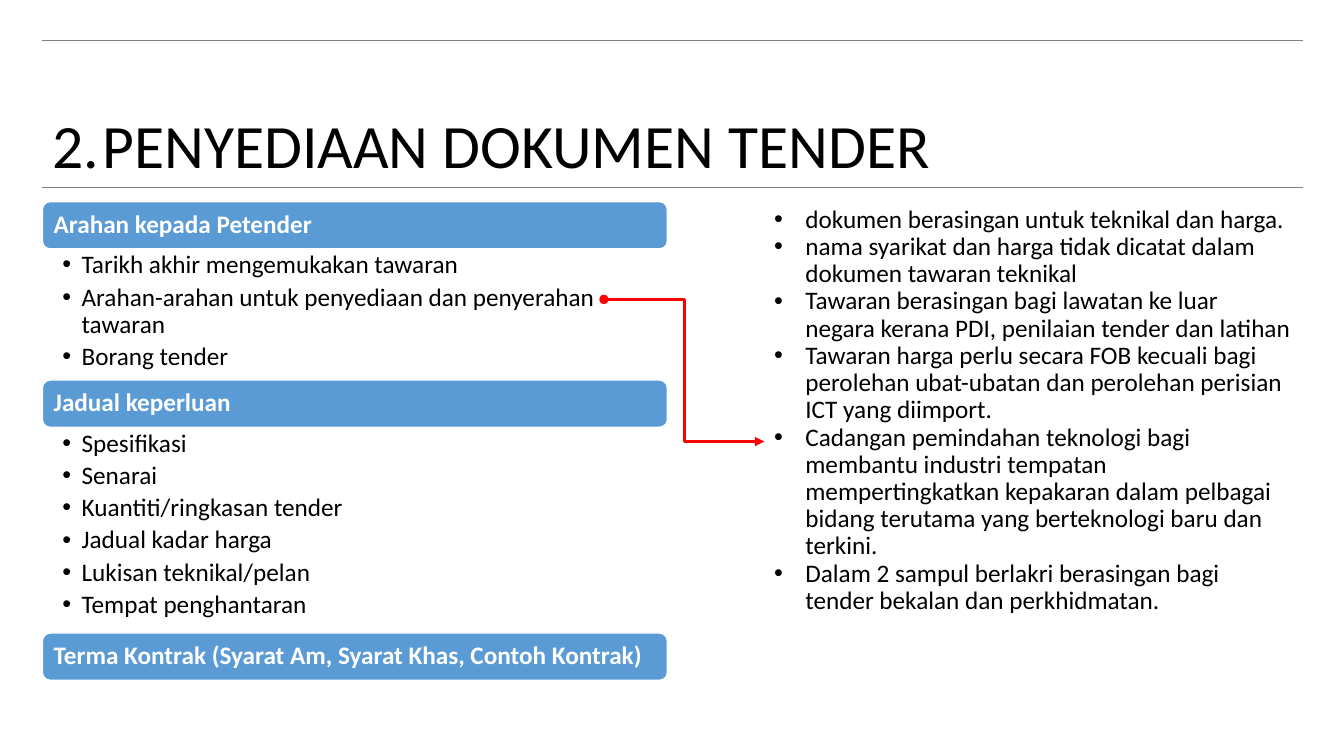
"""Build the tender document preparation slide."""
from lxml import etree
from pptx import Presentation, util as u
from pptx.dml.color import RGBColor
from pptx.enum import shapes, text
from pptx.oxml import ns

TITLE = "2.\tPENYEDIAAN DOKUMEN TENDER"
SECTIONS = [
    ("Arahan kepada Petender", 1.3, [
        "Tarikh akhir mengemukakan tawaran",
        "Arahan-arahan untuk penyediaan dan penyerahan tawaran",
        "Borang tender",
    ]),
    ("Jadual keperluan", 2.04, [
        "Spesifikasi",
        "Senarai",
        "Kuantiti/ringkasan tender",
        "Jadual kadar harga",
        "Lukisan teknikal/pelan",
        "Tempat penghantaran",
    ]),
    ("Terma Kontrak (Syarat Am, Syarat Khas, Contoh Kontrak)", 0, []),
]
DETAILS = [
    "dokumen berasingan untuk teknikal dan harga.",
    "nama syarikat dan harga tidak dicatat dalam dokumen tawaran teknikal",
    "Tawaran berasingan bagi lawatan ke luar negara kerana PDI, penilaian tender dan latihan",
    "Tawaran harga perlu secara FOB kecuali bagi perolehan ubat-ubatan dan perolehan perisian "
    "ICT yang diimport.",
    "Cadangan pemindahan teknologi bagi membantu industri tempatan mempertingkatkan kepakaran "
    "dalam pelbagai bidang terutama yang berteknologi baru dan terkini.",
    "Dalam 2 sampul berlakri berasingan bagi tender bekalan dan perkhidmatan.",
]
LEFT, TOP, WIDTH = 0.42, 2, 12.5
LIST_WIDTH, BAR_HEIGHT = 6.2, 0.47
DETAIL_LEFT, DETAIL_HEIGHT = 7.58, 4.76
RULES = [0.4, 1.86]


def colour(value):
    return RGBColor.from_string(value)


def add_tag(parent, name, **attributes):
    return etree.SubElement(parent, ns.qn(name), attributes)


def write(shape, lines, size=18, ink="000000", bold=False, anchor="TOP",
          insets=(0.1, 0.05, 0.1, 0.05), indent=0, after=0):
    frame = shape.text_frame
    frame.word_wrap = True
    frame.vertical_anchor = getattr(text.MSO_ANCHOR, anchor)
    frame.margin_left, frame.margin_top, frame.margin_right, frame.margin_bottom = map(u.Inches, insets)
    for index, line in enumerate(lines):
        paragraph = frame.add_paragraph() if index else frame.paragraphs[0]
        if indent:
            properties = paragraph._p.get_or_add_pPr()
            properties.set("marL", str(u.Inches(indent)))
            properties.set("indent", str(-u.Inches(indent)))
            add_tag(properties, "a:buFont", typeface="Arial")
            add_tag(properties, "a:buChar", char="•")
        paragraph.alignment = text.PP_ALIGN.LEFT
        paragraph.line_spacing = 0.9
        paragraph.space_after = u.Pt(after)
        run = paragraph.add_run()
        run.text = line
        run.font.name, run.font.size, run.font.bold = "Calibri", u.Pt(size), bold
        run.font.color.rgb = colour(ink)


def add_box(slide, left, top, width, height):
    return slide.shapes.add_textbox(*map(u.Inches, (left, top, width, height)))


def add_bar(slide, top, heading):
    bar = slide.shapes.add_shape(shapes.MSO_SHAPE.ROUNDED_RECTANGLE,
                                 *map(u.Inches, (LEFT, top, LIST_WIDTH, BAR_HEIGHT)))
    bar.shadow.inherit = False
    bar.fill.solid()
    bar.fill.fore_color.rgb = colour("5B9BD5")
    bar.line.color.rgb = colour("FFFFFF")
    bar.line.width = u.Pt(1)
    write(bar, [heading], ink="FFFFFF", bold=True, anchor="MIDDLE", insets=(0.09, 0.07, 0.09, 0.07))


def add_line(slide, kind, start, end, ink, width, ends=()):
    line = slide.shapes.add_connector(kind, *map(u.Inches, (*start, *end)))
    line.line.color.rgb = colour(ink)
    line.line.width = u.Pt(width)
    for name, style in ends:
        add_tag(line.line._get_or_add_ln(), name, type=style)
    add_tag(line._element.spPr, "a:effectLst")


def main():
    presentation = Presentation()
    presentation.slide_width, presentation.slide_height = u.Inches(13.33), u.Inches(7.5)
    slide = presentation.slides.add_slide(presentation.slide_layouts[6])
    for height in RULES:
        add_line(slide, shapes.MSO_CONNECTOR.STRAIGHT, (LEFT, height), (LEFT + WIDTH, height), "808080", 1)
    write(add_box(slide, LEFT, RULES[0], WIDTH, 1.45), [TITLE], size=44, anchor="BOTTOM")
    top = TOP
    for heading, height, items in SECTIONS:
        add_bar(slide, top, heading)
        top += BAR_HEIGHT
        if items:
            write(add_box(slide, LEFT, top, LIST_WIDTH, height), items,
                  insets=(0.2, 0.03, 0.14, 0.03), indent=0.19, after=3.6)
            top += height
    detail_width = LEFT + WIDTH - DETAIL_LEFT
    write(add_box(slide, DETAIL_LEFT, TOP, detail_width, DETAIL_HEIGHT), DETAILS, indent=0.31)
    add_line(slide, shapes.MSO_CONNECTOR.ELBOW, (5.99, 2.97), (DETAIL_LEFT, TOP + DETAIL_HEIGHT / 2),
             "FF0000", 2.25, [("a:headEnd", "oval"), ("a:tailEnd", "triangle")])
    presentation.save("out.pptx")


if __name__ == "__main__":
    main()
